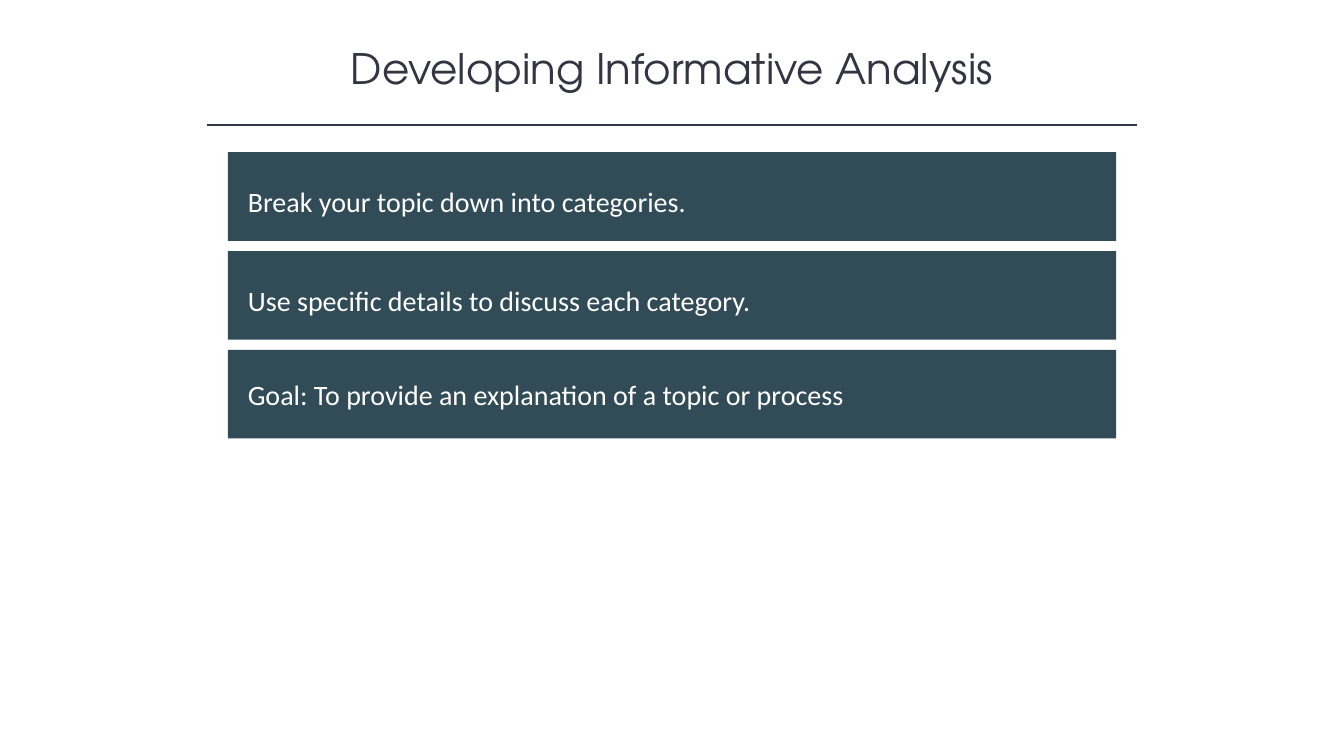
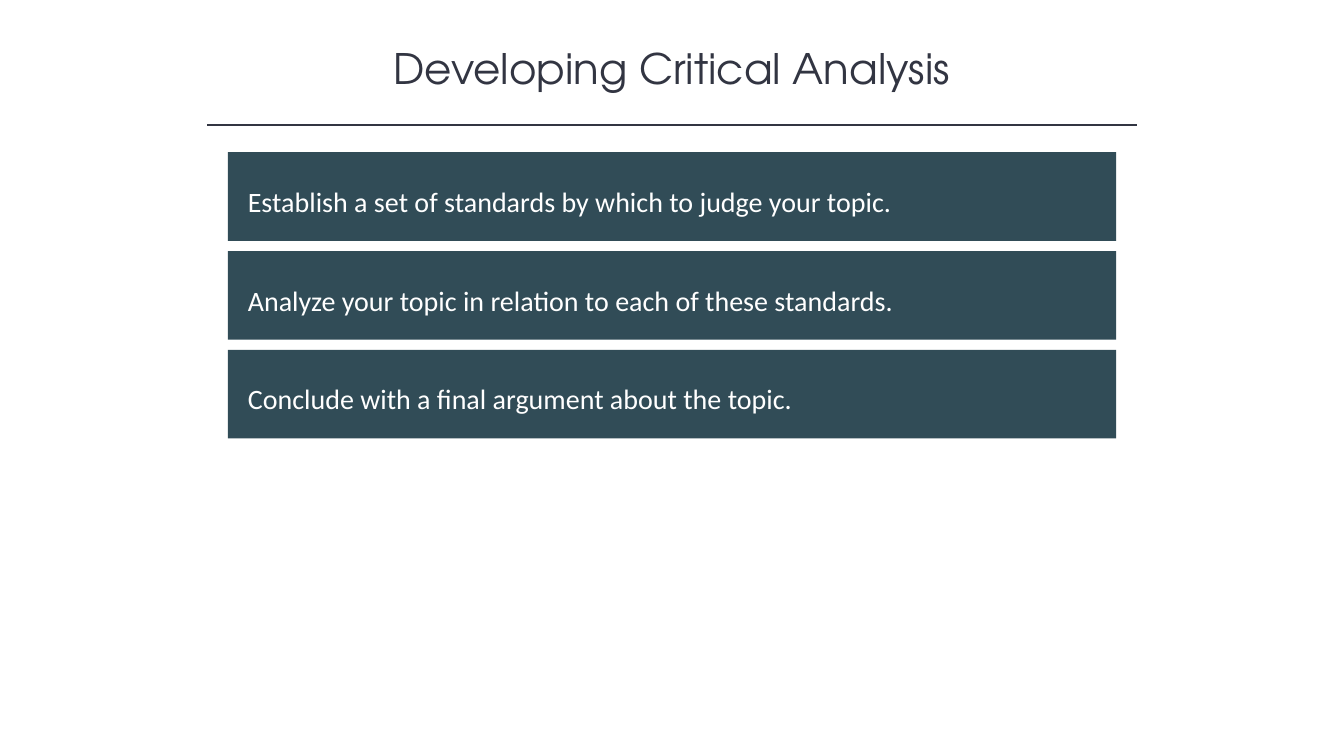
from dataclasses import dataclass

from lxml.etree import SubElement
from pptx import Presentation
from pptx.dml.color import RGBColor
from pptx.enum.shapes import MSO_CONNECTOR as Connector, MSO_SHAPE as Preset
from pptx.enum.text import MSO_ANCHOR as Anchor, MSO_AUTO_SIZE as AutoSize, PP_ALIGN as Align
from pptx.oxml.ns import qn
from pptx.shapes.autoshape import Shape
from pptx.shapes.shapetree import GroupShapes
from pptx.slide import Slide
from pptx.util import Inches, Pt

# Shared style
INK = RGBColor(0x32, 0x35, 0x42)
TEAL = RGBColor(0x31, 0x4C, 0x57)
WHITE = RGBColor(0xFF, 0xFF, 0xFF)
TITLE_FONT = {"name": "TeX Gyre Adventor", "size": Pt(30), "bold": False}
LABEL_FONT = {"name": "Calibri", "size": Pt(20), "bold": False}
FRAME_FORMAT = {
    "word_wrap": True,
    "auto_size": AutoSize.SHAPE_TO_FIT_TEXT,
    "vertical_anchor": Anchor.TOP,
    "margin_left": Inches(0.1),
    "margin_right": Inches(0.1),
    "margin_top": Inches(0.05),
    "margin_bottom": Inches(0.05),
}

# Layout grid, in inches; everything is centred across the slide
SLIDE_WIDTH, SLIDE_HEIGHT = 13.33, 7.5
TITLE_TOP, TITLE_WIDTH, TITLE_HEIGHT = 0.37, 10, 0.61
RULE_TOP, RULE_WIDTH = 1.24, 9.22
BAR_TOP, BAR_WIDTH, BAR_HEIGHT, BAR_PITCH = 1.51, 8.81, 0.88, 0.98
LABEL_INDENT, LABEL_WIDTH, LABEL_HEIGHT = 0.1, 8.54, 0.44


@dataclass(frozen=True)
class Bar:
    text: str
    label_drop: float = 0.27


@dataclass(frozen=True)
class Page:
    title: str
    bars: tuple[Bar, ...]


PAGES = (
    Page("Developing Informative Analysis", (
        Bar("Break your topic down into categories."),
        Bar("Use specific details to discuss each category."),
        Bar("Goal: To provide an explanation of a topic or process", 0.23),
    )),
    Page("Developing Critical Analysis", (
        Bar("Establish a set of standards by which to judge your topic."),
        Bar("Analyze your topic in relation to each of these standards."),
        Bar("Conclude with a final argument about the topic."),
    )),
)


def centred_left(width: float) -> float:
    return (SLIDE_WIDTH - width) / 2


def write_text(shape: Shape, text: str, font_format: dict, color: RGBColor, align: Align) -> None:
    frame = shape.text_frame
    frame.text = text
    for name, value in FRAME_FORMAT.items():
        setattr(frame, name, value)
    paragraph = frame.paragraphs[0]
    paragraph.alignment = align
    font = paragraph.runs[0].font
    for name, value in font_format.items():
        setattr(font, name, value)
    font.color.rgb = color


def add_title(slide: Slide, text: str) -> None:
    title = slide.shapes.title
    title.left, title.top = Inches(centred_left(TITLE_WIDTH)), Inches(TITLE_TOP)
    title.width, title.height = Inches(TITLE_WIDTH), Inches(TITLE_HEIGHT)
    write_text(title, text, TITLE_FONT, INK, Align.CENTER)


def add_rule(slide: Slide) -> None:
    left = centred_left(RULE_WIDTH)
    rule = slide.shapes.add_connector(
        Connector.STRAIGHT, Inches(left), Inches(RULE_TOP),
        Inches(left + RULE_WIDTH), Inches(RULE_TOP))
    rule.line.color.rgb = INK
    rule.line.width = Pt(1)
    SubElement(rule._element.spPr, qn("a:effectLst"))


def add_block(shapes: GroupShapes, left: float, top: float, width: float, height: float) -> Shape:
    block = shapes.add_shape(
        Preset.RECTANGLE, Inches(left), Inches(top), Inches(width), Inches(height))
    block.shadow.inherit = False
    block.fill.solid()
    block.fill.fore_color.rgb = TEAL
    block.line.fill.background()
    return block


def add_bars(slide: Slide, bars: tuple[Bar, ...]) -> None:
    shapes = slide.shapes.add_group_shape().shapes
    left = centred_left(BAR_WIDTH)
    for row, bar in enumerate(bars):
        top = BAR_TOP + row * BAR_PITCH
        add_block(shapes, left, top, BAR_WIDTH, BAR_HEIGHT)
        label = add_block(
            shapes, left + LABEL_INDENT, top + bar.label_drop, LABEL_WIDTH, LABEL_HEIGHT)
        write_text(label, bar.text, LABEL_FONT, WHITE, Align.LEFT)


def main() -> None:
    presentation = Presentation()
    presentation.slide_width = Inches(SLIDE_WIDTH)
    presentation.slide_height = Inches(SLIDE_HEIGHT)
    title_only = presentation.slide_layouts.get_by_name("Title Only")
    for page in PAGES:
        slide = presentation.slides.add_slide(title_only)
        add_title(slide, page.title)
        add_rule(slide)
        add_bars(slide, page.bars)
    presentation.save("out.pptx")


if __name__ == "__main__":
    main()
